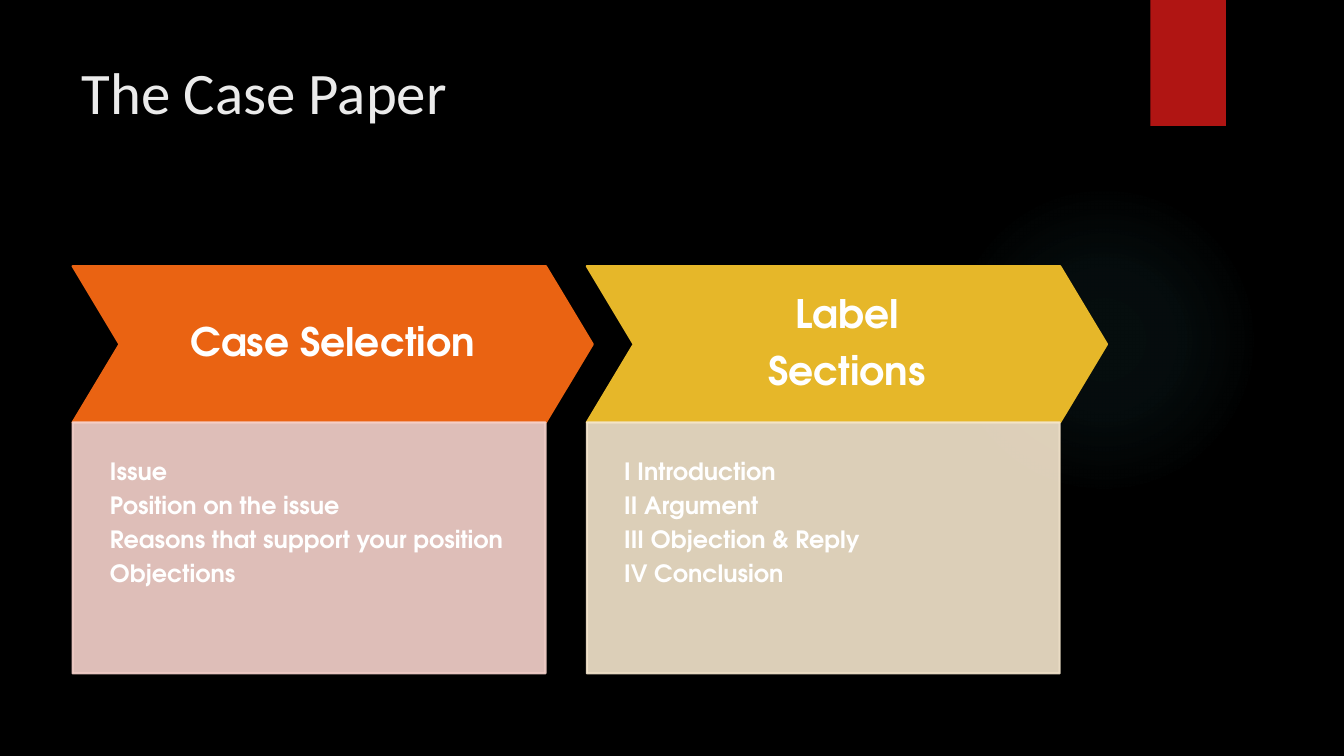
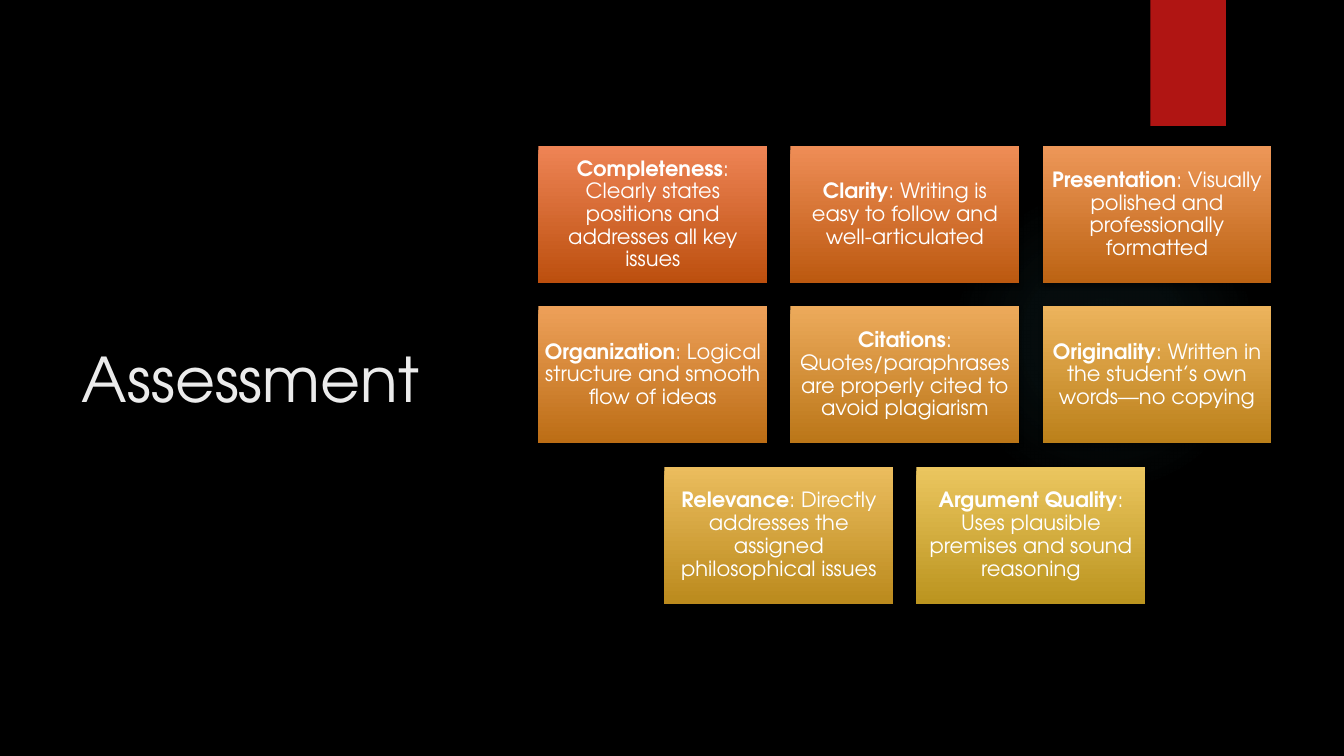
from dataclasses import dataclass

from lxml import etree
from pptx import Presentation
from pptx.dml.color import RGBColor
from pptx.enum.shapes import MSO_SHAPE
from pptx.enum.text import MSO_ANCHOR, MSO_AUTO_SIZE, PP_ALIGN
from pptx.oxml import parse_xml
from pptx.oxml.ns import nsdecls, qn
from pptx.util import Inches, Pt

RECTANGLE, CHEVRON, OVAL = MSO_SHAPE.RECTANGLE, MSO_SHAPE.CHEVRON, MSO_SHAPE.OVAL
TOP, MIDDLE = MSO_ANCHOR.TOP, MSO_ANCHOR.MIDDLE
LEFT, CENTER = PP_ALIGN.LEFT, PP_ALIGN.CENTER
FIXED_SIZE = MSO_AUTO_SIZE.NONE

COLORS = {
    "background": "000000",
    "glow": "50B9C1",
    "band": "B01513",
    "title": "EBEBEB",
    "text": "FFFFFF",
    "orange": "EA6312",
    "orange tint": "F7D3CC",
    "gold": "E6B729",
    "gold tint": "F5E6CD",
    "first card top": "EE8455",
    "first card bottom": "BC4F0E",
    "last card top": "EBC65F",
    "last card bottom": "BB941F",
}
TITLE_FONT = "Calibri"
BODY_FONT = "TeX Gyre Adventor"
TITLE_ONLY_LAYOUT = 5


@dataclass(frozen=True)
class Area:
    """Position and size in inches."""
    left: float
    top: float
    width: float
    height: float

    def lengths(self) -> tuple:
        return tuple(Inches(n) for n in (self.left, self.top, self.width, self.height))


@dataclass(frozen=True)
class Grid:
    """Equal cells, counted in columns and rows from the first cell."""
    first: Area
    column_gap: float
    row_gap: float = 0

    def cell(self, column: float, row: float = 0) -> Area:
        return Area(self.first.left + column * (self.first.width + self.column_gap),
                    self.first.top + row * (self.first.height + self.row_gap),
                    self.first.width, self.first.height)


@dataclass(frozen=True)
class Step:
    heading: tuple
    points: tuple
    color: str


@dataclass(frozen=True)
class Criterion:
    name: str
    meaning: str


@dataclass(frozen=True)
class TextStyle:
    size: float
    align: PP_ALIGN
    anchor: MSO_ANCHOR
    insets: tuple  # left, top, right, bottom
    bold: bool = False


STEP_HEADING = TextStyle(28, CENTER, MIDDLE, (0.19,) * 4, True)
STEP_BODY = TextStyle(17, LEFT, TOP, (0.37, 0.37, 0.37, 0.74), True)
CARD_TEXT = TextStyle(15, CENTER, MIDDLE, (0.06,) * 4)

GLOW = Area(9.41, 1.83, 3.08, 3.08)
BAND = Area(11.41, 0, 0.75, 1.25)
STEP_GRID = Grid(Area(0.72, 2.64, 4.69, 1.55), 0.41)
CHEVRON_POINT = 0.47
STEP_BODY_HEIGHT = 2.49
CARD_GRID = Grid(Area(5.34, 1.45, 2.27, 1.36), 0.23, 0.23)
CARD_COLUMNS = 3

STEPS = (
    Step(("Case Selection",),
         ("Issue", "Position on the issue",
          "Reasons that support your position", "Objections"), "orange"),
    Step(("Label", "Sections"),
         ("I Introduction", "II Argument",
          "III Objection & Reply", "IV Conclusion"), "gold"),
)
CRITERIA = (
    Criterion("Completeness", "Clearly states positions and addresses all key issues"),
    Criterion("Clarity", "Writing is easy to follow and well-articulated"),
    Criterion("Presentation", "Visually polished and professionally formatted"),
    Criterion("Organization", "Logical structure and smooth flow of ideas"),
    Criterion("Citations", "Quotes/paraphrases are properly cited to avoid plagiarism"),
    Criterion("Originality", "Written in the student’s own words—no copying"),
    Criterion("Relevance", "Directly addresses the assigned philosophical issues"),
    Criterion("Argument Quality", "Uses plausible premises and sound reasoning"),
)


def color(name: str) -> RGBColor:
    return RGBColor.from_string(COLORS[name])


def blend(start: str, end: str, share: float) -> RGBColor:
    return RGBColor(*(round(a + (b - a) * share)
                      for a, b in zip(color(start), color(end))))


def add_plain_shape(page, kind, area: Area):
    shape = page.shapes.add_shape(kind, *area.lengths())
    shape.shadow.inherit = False
    shape.line.fill.background()
    return shape


def add_shadow(shape) -> None:
    effects = shape._element.spPr.find(qn("a:effectLst"))
    effects.append(parse_xml(
        f'<a:outerShdw {nsdecls("a")} blurRad="{Pt(3)}" dist="{Pt(2)}" dir="5400000" '
        'rotWithShape="0"><a:srgbClr val="000000"><a:alpha val="45000"/>'
        '</a:srgbClr></a:outerShdw>'))


def paint(shape, name: str, opacity: int = 100) -> None:
    """Give fill and outline one colour."""
    shape.fill.solid()
    shape.fill.fore_color.rgb = color(name)
    shape.line.color.rgb = color(name)
    shape.line.width = Pt(1.5)
    if opacity < 100:
        for value in shape._element.spPr.iter(qn("a:srgbClr")):
            etree.SubElement(value, qn("a:alpha")).set("val", str(opacity * 1000))


def write(shape, paragraphs: tuple, style: TextStyle) -> None:
    """Write paragraphs; each is a tuple of (text, bold) runs."""
    frame = shape.text_frame
    frame.word_wrap = True
    frame.vertical_anchor = style.anchor
    (frame.margin_left, frame.margin_top,
     frame.margin_right, frame.margin_bottom) = map(Inches, style.insets)
    for index, spans in enumerate(paragraphs):
        para = frame.add_paragraph() if index else frame.paragraphs[0]
        para.alignment = style.align
        para.line_spacing = 0.9
        para.space_after = Pt(round(0.35 * style.size, 1))
        para.font.name = BODY_FONT
        para.font.size = Pt(style.size)
        para.font.bold = style.bold
        para.font.color.rgb = color("text")
        for text, bold in spans:
            span = para.add_run()
            span.text = text
            if bold != style.bold:
                span.font.bold = bold


def format_title(page, text: str, area: Area, size: float, font: str, anchor) -> None:
    title = page.shapes.title
    title.left, title.top, title.width, title.height = area.lengths()
    frame = title.text_frame
    frame.text = text
    frame.word_wrap = True
    frame.auto_size = FIXED_SIZE
    frame.vertical_anchor = anchor
    para = frame.paragraphs[0]
    para.alignment = LEFT
    para.font.name = font
    para.font.size = Pt(size)
    para.font.color.rgb = color("title")


def decorate_layout(layout, page) -> None:
    """Give the layout its background, glow and band, by way of a page."""
    layout.background.fill.solid()
    layout.background.fill.fore_color.rgb = color("background")

    glow = add_plain_shape(page, OVAL, GLOW)
    glow.fill.background()
    stops = "".join(
        f'<a:gs pos="{place * 1000}"><a:srgbClr val="{COLORS["glow"]}">'
        f'<a:alpha val="{opacity * 1000}"/></a:srgbClr></a:gs>'
        for place, opacity in ((0, 7), (36, 6), (69, 0)))
    properties = glow._element.spPr
    properties.replace(properties.find(qn("a:noFill")), parse_xml(
        f'<a:gradFill {nsdecls("a")}><a:gsLst>{stops}</a:gsLst><a:path path="circle">'
        '<a:fillToRect l="50000" t="50000" r="50000" b="50000"/></a:path></a:gradFill>'))

    band = add_plain_shape(page, RECTANGLE, BAND)
    band.fill.solid()
    band.fill.fore_color.rgb = color("band")
    add_shadow(band)

    for shape in (glow, band):
        layout.shapes._spTree.append(shape._element)


def add_step(page, step: Step, column: int) -> None:
    cell = STEP_GRID.cell(column)
    arrow = add_plain_shape(page, CHEVRON, Area(
        cell.left, cell.top, cell.width + CHEVRON_POINT, cell.height))
    arrow.adjustments[0] = 0.3
    paint(arrow, step.color)
    write(arrow, tuple(((line, True),) for line in step.heading), STEP_HEADING)

    box = add_plain_shape(page, RECTANGLE, Area(
        cell.left, cell.top + cell.height, cell.width, STEP_BODY_HEIGHT))
    paint(box, f"{step.color} tint", opacity=90)
    write(box, tuple(((point, True),) for point in step.points), STEP_BODY)


def add_card(page, criterion: Criterion, index: int) -> None:
    row, column = divmod(index, CARD_COLUMNS)
    cards_in_row = min(CARD_COLUMNS, len(CRITERIA) - row * CARD_COLUMNS)
    indent = (CARD_COLUMNS - cards_in_row) / 2  # centres a short row
    card = add_plain_shape(page, RECTANGLE, CARD_GRID.cell(column + indent, row))
    card.fill.gradient()
    card.fill.gradient_angle = 270
    share = index / (len(CRITERIA) - 1)
    for stop, place, edge in zip(card.fill.gradient_stops, (0, 1), ("top", "bottom")):
        stop.position = place
        stop.color.rgb = blend(f"first card {edge}", f"last card {edge}", share)
    add_shadow(card)
    write(card, (((criterion.name, True), (f": {criterion.meaning}", False)),), CARD_TEXT)


def main() -> None:
    deck = Presentation()
    deck.slide_width, deck.slide_height = Inches(13.33), Inches(7.5)
    layout = deck.slide_layouts[TITLE_ONLY_LAYOUT]

    # Case paper: two steps
    page = deck.slides.add_slide(layout)
    decorate_layout(layout, page)
    format_title(page, "The Case Paper", Area(0.71, 0.5, 10.29, 1.53),
                 42, TITLE_FONT, TOP)
    for column, step in enumerate(STEPS):
        add_step(page, step, column)

    # Assessment: grid of criteria
    page = deck.slides.add_slide(layout)
    format_title(page, "Assessment", Area(0.71, 1.51, 3.88, 4.48),
                 44, BODY_FONT, MIDDLE)
    for index, criterion in enumerate(CRITERIA):
        add_card(page, criterion, index)

    deck.save("out.pptx")


if __name__ == "__main__":
    main()
